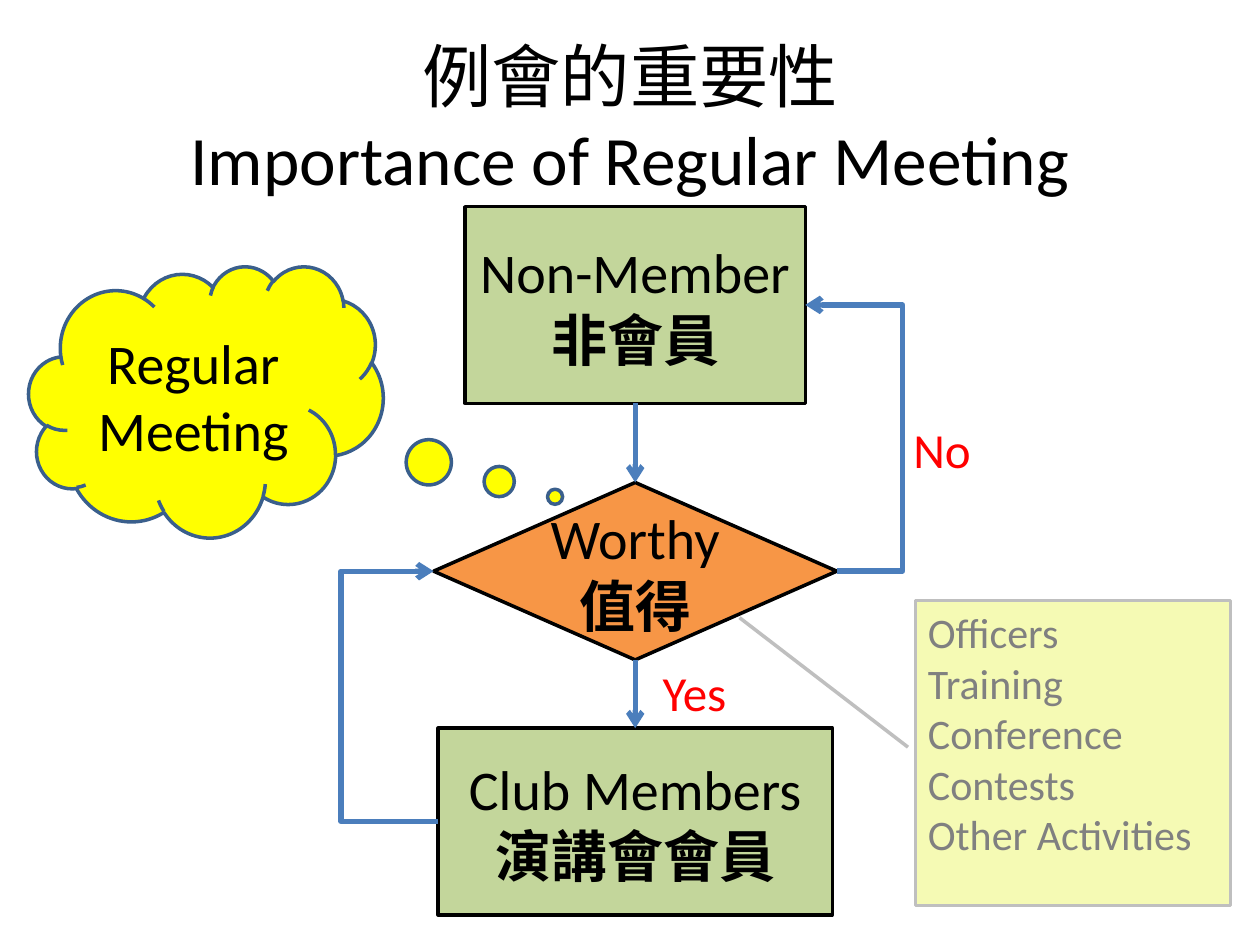
"""Build a flowchart slide on the importance of regular meetings."""
from lxml.etree import SubElement
from pptx import Presentation
from pptx.dml.color import RGBColor
from pptx.enum.shapes import MSO_CONNECTOR, MSO_SHAPE
from pptx.enum.text import MSO_ANCHOR, MSO_AUTO_SIZE, PP_ALIGN
from pptx.oxml.ns import qn
from pptx.util import Pt

BLACK = RGBColor(0x00, 0x00, 0x00)
RED = RGBColor(0xFF, 0x00, 0x00)
GREEN = RGBColor(0xC3, 0xD6, 0x9B)
ORANGE = RGBColor(0xF7, 0x96, 0x46)
YELLOW = RGBColor(0xFF, 0xFF, 0x00)
PALE = RGBColor(0xF5, 0xFA, 0xB4)
NAVY = RGBColor(0x3A, 0x5F, 0x8C)
BLUE = RGBColor(0x4B, 0x7E, 0xBC)
SILVER = RGBColor(0xBF, 0xBF, 0xBF)
GRAY = RGBColor(0x80, 0x80, 0x80)

TITLE = "例會的重要性\vImportance of Regular Meeting"
CENTER = 363
STEPS = [
    ("Non-Member\n非會員", MSO_SHAPE.FLOWCHART_PROCESS, GREEN, 118.1, 194.4, 112.4),
    ("Worthy\n值得", MSO_SHAPE.FLOWCHART_DECISION, ORANGE, 275.7, 230.4, 101.4),
    ("Club Members\n演講會會員", MSO_SHAPE.FLOWCHART_PROCESS, GREEN, 416.1, 225.2, 106.6),
]
TOP, LEFT, BOTTOM, RIGHT = range(4)
ARROWS = [
    (0, BOTTOM, 1, TOP, None),
    (1, BOTTOM, 2, TOP, None),
    (1, RIGHT, 0, RIGHT, 515.8),
    (2, LEFT, 1, LEFT, 195),
]
ANSWERS = [("No", 514.8, 236.2, 47.5), ("Yes", 371.5, 375.1, 51.1)]
CLOUD = "Regular Meeting"
ACTIVITIES = "Officers\nTraining\nConference\nContests\nOther Activities"


def write(tf, text, size=32, color=BLACK, align=PP_ALIGN.CENTER,
          anchor=MSO_ANCHOR.MIDDLE, wrap=True, bold_last=False):
    tf.word_wrap = wrap
    tf.auto_size = MSO_AUTO_SIZE.NONE
    tf.vertical_anchor = anchor
    lines = text.split("\n")
    for i, line in enumerate(lines):
        p = tf.add_paragraph() if i else tf.paragraphs[0]
        p.text = line
        p.alignment = align
        for r in p.runs:
            r.font.name = "Calibri"
            r.font.size = Pt(size)
            r.font.color.rgb = color
            if bold_last and i == len(lines) - 1:
                r.font.bold = True


def add_box(s, kind, place, fill, line, adjustments=()):
    sp = s.shapes.add_shape(kind, *map(Pt, place))
    sp.shadow.inherit = False
    sp.fill.solid()
    sp.fill.fore_color.rgb = fill
    sp.line.color.rgb = line
    sp.line.width = Pt(2)
    for i, value in enumerate(adjustments):
        sp.adjustments[i] = value
    return sp


def add_arrow(s, start, start_site, end, end_site, via):
    kind = MSO_CONNECTOR.STRAIGHT if via is None else MSO_CONNECTOR.ELBOW
    cx = s.shapes.add_connector(kind, 0, 0, 0, 0)
    cx.begin_connect(start, start_site)
    cx.end_connect(end, end_site)
    cx.line.color.rgb = BLUE
    cx.line.width = Pt(3)
    props = cx._element.spPr
    SubElement(props.find(qn("a:ln")), qn("a:tailEnd"), type="arrow")
    SubElement(props, qn("a:effectLst"))
    if via is not None:
        bend = (Pt(via) - cx.begin_x) / (cx.end_x - cx.begin_x)
        guides = props.find(qn("a:prstGeom")).find(qn("a:avLst"))
        SubElement(guides, qn("a:gd"), name="adj1", fmla=f"val {round(bend * 100000)}")


def main():
    prs = Presentation()
    prs.slide_width, prs.slide_height = Pt(720), Pt(540)
    s = prs.slides.add_slide(prs.slide_layouts[5])
    title = s.shapes.title
    title.left, title.top, title.width, title.height = map(Pt, (36, 21.6, 648, 90))
    write(title.text_frame, TITLE, size=39.6)

    steps = []
    for text, kind, fill, top, width, height in STEPS:
        sp = add_box(s, kind, (CENTER - width / 2, top, width, height), fill, BLACK)
        write(sp.text_frame, text, bold_last=True)
        steps.append(sp)
    for start, start_site, end, end_site, via in ARROWS:
        add_arrow(s, steps[start], start_site, steps[end], end_site, via)

    for text, left, top, width in ANSWERS:
        sp = s.shapes.add_textbox(Pt(left), Pt(top), Pt(width), Pt(41.2))
        write(sp.text_frame, text, size=28, color=RED, align=PP_ALIGN.LEFT,
              anchor=MSO_ANCHOR.TOP, wrap=False)

    cloud = add_box(s, MSO_SHAPE.CLOUD_CALLOUT, (16.5, 152, 202.5, 155), YELLOW, NAVY,
                    (0.985, 0.351))
    write(cloud.text_frame, CLOUD)
    note = add_box(s, MSO_SHAPE.LINE_CALLOUT_1, (523.2, 343.2, 180, 174.2), PALE, SILVER,
                   (0.481, -0.024, 0.056, -0.559))
    write(note.text_frame, ACTIVITIES, size=24, color=GRAY, align=PP_ALIGN.LEFT,
          anchor=MSO_ANCHOR.TOP)
    prs.save("out.pptx")


if __name__ == "__main__":
    main()
